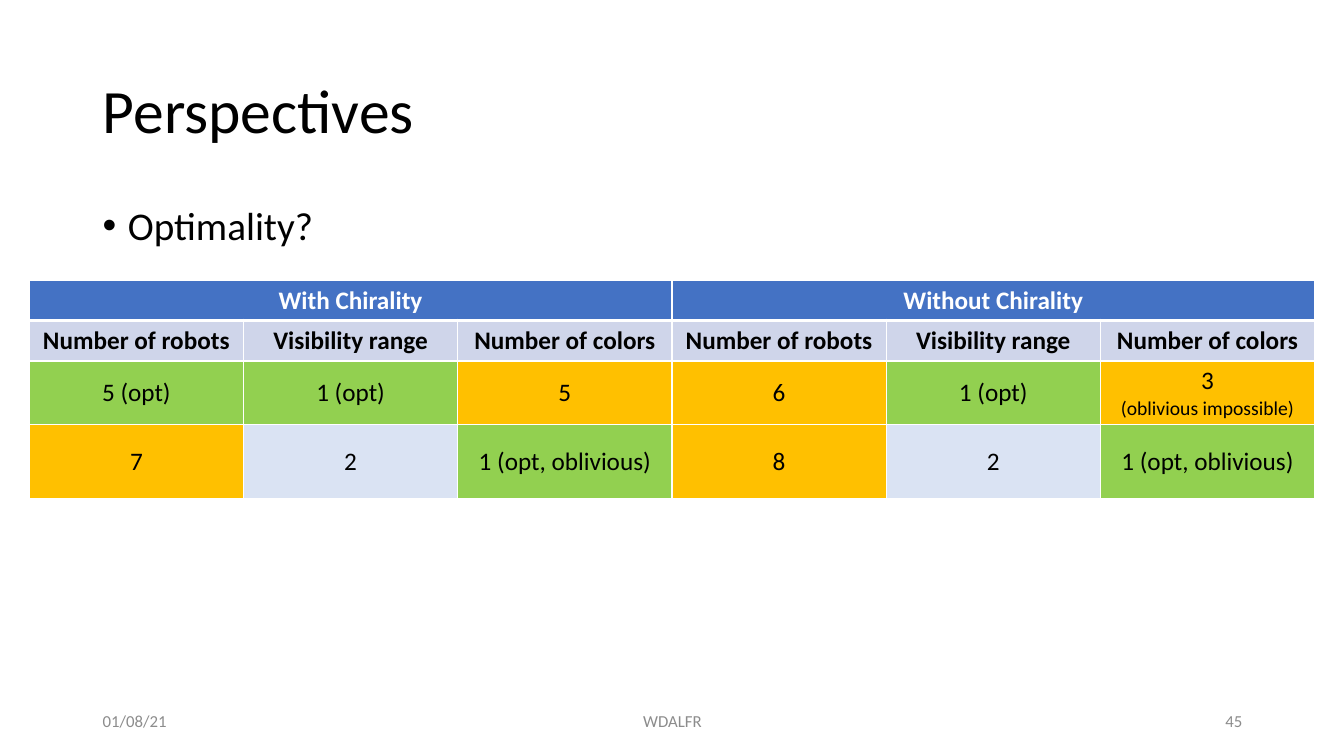
"""Build the Perspectives slide with its table of optimality results."""
from lxml.etree import SubElement
from pptx import Presentation
from pptx.dml.color import RGBColor
from pptx.enum.text import MSO_ANCHOR, MSO_AUTO_SIZE, PP_ALIGN
from pptx.oxml.ns import qn
from pptx.util import Inches, Pt

COLORS = {
    "text": "000000",
    "footer": "8C8C8C",
    "white": "FFFFFF",
    "header": "4472C4",
    "subheader": "CFD5EA",
    "optimal": "92D050",
    "open": "FFC000",
    "neutral": "DAE3F3",
}
MARGIN = 0.92
CONTENT_WIDTH = 11.5


def write(paragraph, text, size, color="text", bold=False, align=PP_ALIGN.LEFT):
    """Add one formatted run to a paragraph."""
    paragraph.alignment = align
    run = paragraph.add_run()
    run.text = text
    run.font.name = "Calibri"
    run.font.size = Pt(size)
    run.font.bold = bold
    run.font.color.rgb = RGBColor.from_string(COLORS[color])


def add_border(cell, side, width):
    """Draw one white border line on a cell."""
    line = SubElement(cell._tc.get_or_add_tcPr(), qn(f"a:ln{side}"), w=str(Pt(width)))
    fill = SubElement(line, qn("a:solidFill"))
    SubElement(fill, qn("a:srgbClr"), val=COLORS["white"])


presentation = Presentation()
presentation.slide_width = Inches(13.33)
presentation.slide_height = Inches(7.5)
slide = presentation.slides.add_slide(presentation.slide_layouts[5])

title = slide.shapes.title
title.left, title.top = Inches(MARGIN), Inches(0.4)
title.width, title.height = Inches(CONTENT_WIDTH), Inches(1.45)
title.text_frame.auto_size = MSO_AUTO_SIZE.NONE
title.text_frame.vertical_anchor = MSO_ANCHOR.MIDDLE
title_paragraph = title.text_frame.paragraphs[0]
title_paragraph.line_spacing = 0.9
write(title_paragraph, "Perspectives", 44)

body = slide.shapes.add_textbox(Inches(MARGIN), Inches(2), Inches(CONTENT_WIDTH), Inches(4.76))
body.text_frame.word_wrap = True
bullet_paragraph = body.text_frame.paragraphs[0]
bullet_paragraph.line_spacing = 0.9
bullet_paragraph.space_before = Pt(10)
write(bullet_paragraph, "Optimality?", 28)
properties = bullet_paragraph._p.get_or_add_pPr()
properties.set("marL", str(Inches(0.25)))
properties.set("indent", str(-Inches(0.25)))
SubElement(properties, qn("a:buFont"), typeface="Arial")
SubElement(properties, qn("a:buChar"), char="•")

footers = [
    ("01/08/21", MARGIN, 3, PP_ALIGN.LEFT),
    ("WDALFR", 4.42, 4.5, PP_ALIGN.CENTER),
    ("45", 9.42, 3, PP_ALIGN.RIGHT),
]
for text, left, width, align in footers:
    footer = slide.shapes.add_textbox(Inches(left), Inches(6.95), Inches(width), Inches(0.4))
    footer.text_frame.word_wrap = True
    footer.text_frame.vertical_anchor = MSO_ANCHOR.MIDDLE
    write(footer.text_frame.paragraphs[0], text, 12, "footer", align=align)

measures = ["Number of robots", "Visibility range", "Number of colors"]
rows = [
    [("With Chirality", "header"), ("", "header"), ("", "header"),
     ("Without Chirality", "header"), ("", "header"), ("", "header")],
    [(measure, "subheader") for measure in measures * 2],
    [("5 (opt)", "optimal"), ("1 (opt)", "optimal"), ("5", "open"),
     ("6", "open"), ("1 (opt)", "optimal"), ("3\n(oblivious impossible)", "open")],
    [("7", "open"), ("2", "neutral"), ("1 (opt, oblivious)", "optimal"),
     ("8", "open"), ("2", "neutral"), ("1 (opt, oblivious)", "optimal")],
]
row_heights = [0.39, 0.39, 0.62, 0.73]

table = slide.shapes.add_table(
    len(rows), len(rows[0]), Inches(0.29), Inches(2.78), Inches(12.75), Inches(sum(row_heights))
).table
for row, height in zip(table.rows, row_heights):
    row.height = Inches(height)
for first in (0, 3):
    table.cell(0, first).merge(table.cell(0, first + 2))

for row_index, row in enumerate(rows):
    for column_index, (text, fill) in enumerate(row):
        cell = table.cell(row_index, column_index)
        cell.vertical_anchor = MSO_ANCHOR.MIDDLE
        for side in "LRTB":
            header_edge = (row_index, side) in ((0, "B"), (1, "T"))
            add_border(cell, side, 3 if header_edge else 1)
        cell.fill.solid()
        cell.fill.fore_color.rgb = RGBColor.from_string(COLORS[fill])
        if cell.is_spanned:
            continue
        for line_index, line in enumerate(text.split("\n")):
            frame = cell.text_frame
            paragraph = frame.add_paragraph() if line_index else frame.paragraphs[0]
            write(paragraph, line, 14 if line_index else 18,
                  "white" if row_index == 0 else "text", row_index < 2, PP_ALIGN.CENTER)

presentation.save("out.pptx")
